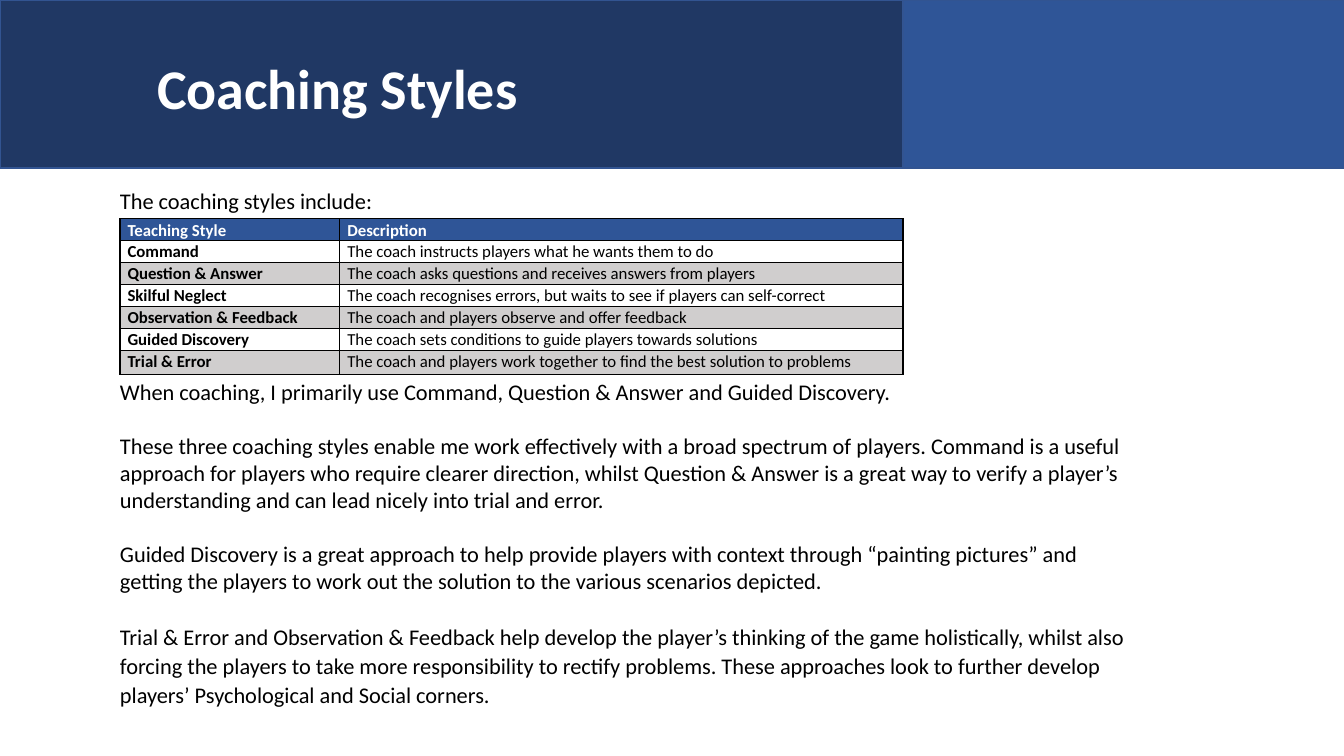
"""Build the Coaching Styles slide."""
from dataclasses import dataclass

import pptx
import pptx.dml.color
import pptx.enum.shapes
import pptx.enum.text
import pptx.oxml
import pptx.oxml.ns
import pptx.util
import pptx.shapes.autoshape
import pptx.shapes.graphfrm
import pptx.slide
import pptx.table
import pptx.text.text


@dataclass(frozen=True)
class Theme:
    font: str = "Calibri"
    navy: str = "203864"
    blue: str = "2F5597"
    outline: str = "325491"
    white: str = "FFFFFF"
    grey: str = "D0CECE"
    black: str = "000000"
    title_size: float = 40
    body_size: float = 16
    table_size: float = 12


@dataclass(frozen=True)
class Frame:
    left: float
    top: float
    width: float
    height: float


@dataclass(frozen=True)
class Bar:
    frame: Frame
    fill: str


@dataclass(frozen=True)
class Style:
    name: str
    description: str


@dataclass(frozen=True)
class Passage:
    text: str
    before: float = 19.5
    after: float = 0
    spacing: float = 1.0


THEME = Theme()
SLIDE_WIDTH, SLIDE_HEIGHT = 960, 540
BAND_HEIGHT, BAND_SPLIT = 120.2, 645.1
TITLE_FRAME = Frame(105.1, 38.2, 828, 54)
TABLE_FRAME = Frame(85.7, 156.2, 559.4, 109.4)
BODY_FRAME = Frame(78.5, 130.3, 733, 388.8)
NAME_WIDTH = 157
ROW_HEIGHT = 15.36
CELL_MARGIN = 5.4

NAVY_BAR = Bar(Frame(0, 0, BAND_SPLIT, BAND_HEIGHT), THEME.navy)
BLUE_BAR = Bar(Frame(BAND_SPLIT, 0, SLIDE_WIDTH - BAND_SPLIT, BAND_HEIGHT), THEME.blue)

STYLES = [
    Style("Teaching Style", "Description"),
    Style("Command", "The coach instructs players what he wants them to do"),
    Style("Question & Answer", "The coach asks questions and receives answers from players"),
    Style("Skilful Neglect",
          "The coach recognises errors, but waits to see if players can self-correct"),
    Style("Observation & Feedback", "The coach and players observe and offer feedback"),
    Style("Guided Discovery", "The coach sets conditions to guide players towards solutions"),
    Style("Trial & Error",
          "The coach and players work together to find the best solution to problems"),
]

PASSAGES = [
    Passage("The coaching styles include:", before=0),
    Passage("When coaching, I primarily use Command, Question & Answer and Guided Discovery.",
            before=117.2),
    Passage("These three coaching styles enable me work effectively with a broad spectrum of "
            "players. Command is a useful approach for players who require clearer direction, "
            "whilst Question & Answer is a great way to verify a player’s understanding and "
            "can lead nicely into trial and error."),
    Passage("Guided Discovery is a great approach to help provide players with context through "
            "“painting pictures” and getting the players to work out the solution to the "
            "various scenarios depicted."),
    Passage("Trial & Error and Observation & Feedback help develop the player’s thinking of "
            "the game holistically, whilst also forcing the players to take more "
            "responsibility to rectify problems. These approaches look to further develop "
            "players’ Psychological and Social corners.", after=8, spacing=1.07),
]


def colour(value: str) -> pptx.dml.color.RGBColor:
    """Turn a hex string into a colour."""
    return pptx.dml.color.RGBColor.from_string(value)


def points(frame: Frame) -> list[pptx.util.Pt]:
    """Give a frame's left, top, width and height as lengths."""
    return [pptx.util.Pt(value) for value in (frame.left, frame.top, frame.width, frame.height)]


def write(para: pptx.text.text._Paragraph, text: str, *, size: float,
          ink: str = THEME.black, bold: bool = False, before: float = 0,
          after: float = 0, spacing: float = 1.0) -> None:
    """Write one formatted paragraph."""
    para.alignment = pptx.enum.text.PP_ALIGN.LEFT
    para.space_before = pptx.util.Pt(before)
    para.space_after = pptx.util.Pt(after)
    para.line_spacing = spacing
    span = para.add_run()
    span.text = text
    span.font.name = THEME.font
    span.font.size = pptx.util.Pt(size)
    span.font.bold = bold
    span.font.color.rgb = colour(ink)


def place(box: pptx.shapes.autoshape.Shape, frame: Frame) -> None:
    """Move and resize a placeholder."""
    box.left, box.top, box.width, box.height = points(frame)


def add_bar(page: pptx.slide.Slide, bar: Bar) -> pptx.shapes.autoshape.Shape:
    """Add one block of the header band."""
    box = page.shapes.add_shape(pptx.enum.shapes.MSO_SHAPE.RECTANGLE, *points(bar.frame))
    box.shadow.inherit = False
    box.fill.solid()
    box.fill.fore_color.rgb = colour(bar.fill)
    box.line.color.rgb = colour(THEME.outline)
    box.line.width = pptx.util.Pt(1)
    return box


def fill_title(page: pptx.slide.Slide) -> pptx.shapes.autoshape.Shape:
    """Fill the title placeholder."""
    box = page.shapes.title
    place(box, TITLE_FRAME)
    box.text_frame.vertical_anchor = pptx.enum.text.MSO_ANCHOR.MIDDLE
    box.text_frame.auto_size = pptx.enum.text.MSO_AUTO_SIZE.NONE
    write(box.text_frame.paragraphs[0], "Coaching Styles", size=THEME.title_size,
          ink=THEME.white, bold=True, spacing=0.9)
    return box


def fill_body(page: pptx.slide.Slide) -> pptx.shapes.autoshape.Shape:
    """Fill the body placeholder with unbulleted passages."""
    box = page.placeholders[1]
    place(box, BODY_FRAME)
    frame = box.text_frame
    frame.word_wrap = True
    frame.auto_size = pptx.enum.text.MSO_AUTO_SIZE.SHAPE_TO_FIT_TEXT
    for index, passage in enumerate(PASSAGES):
        para = frame.add_paragraph() if index else frame.paragraphs[0]
        write(para, passage.text, size=THEME.body_size, before=passage.before,
              after=passage.after, spacing=passage.spacing)
        properties = para._p.get_or_add_pPr()
        properties.set("marL", "0")
        properties.set("indent", "0")
        pptx.oxml.ns.qn("a:buNone")
        properties.append(pptx.oxml.parse_xml(
            f'<a:buNone {pptx.oxml.ns.nsdecls("a")}/>'))
    return box


def add_borders(cell: pptx.table._Cell) -> None:
    """Draw a thin line on all four sides of a cell."""
    properties = cell._tc.get_or_add_tcPr()
    for side in ("lnL", "lnR", "lnT", "lnB"):
        properties.append(pptx.oxml.parse_xml(
            f'<a:{side} {pptx.oxml.ns.nsdecls("a")} w="{pptx.util.Pt(1)}"><a:solidFill>'
            f'<a:srgbClr val="{THEME.black}"/></a:solidFill></a:{side}>'))


def add_styles_table(page: pptx.slide.Slide) -> pptx.shapes.graphfrm.GraphicFrame:
    """Add the table of coaching styles."""
    holder = page.shapes.add_table(len(STYLES), 2, *points(TABLE_FRAME))
    table = holder.table
    table.horz_banding = False
    table.columns[0].width = pptx.util.Pt(NAME_WIDTH)
    table.columns[1].width = pptx.util.Pt(TABLE_FRAME.width - NAME_WIDTH)
    last = len(STYLES) - 1
    for row, style in enumerate(STYLES):
        height = TABLE_FRAME.height - last * ROW_HEIGHT if row == last else ROW_HEIGHT
        table.rows[row].height = pptx.util.Pt(height)
        fill = THEME.blue if row == 0 else THEME.white if row % 2 else THEME.grey
        for column, text in enumerate((style.name, style.description)):
            cell = table.cell(row, column)
            add_borders(cell)
            cell.fill.solid()
            cell.fill.fore_color.rgb = colour(fill)
            cell.margin_left = cell.margin_right = pptx.util.Pt(CELL_MARGIN)
            cell.margin_top = cell.margin_bottom = pptx.util.Pt(0)
            write(cell.text_frame.paragraphs[0], text, size=THEME.table_size,
                  ink=THEME.black if row else THEME.white,
                  bold=row == 0 or column == 0, after=8, spacing=1.07)
    return holder


def main() -> None:
    """Build and save the deck."""
    deck = pptx.Presentation()
    deck.slide_width = pptx.util.Pt(SLIDE_WIDTH)
    deck.slide_height = pptx.util.Pt(SLIDE_HEIGHT)
    page = deck.slides.add_slide(deck.slide_layouts[1])
    layers = [add_bar(page, NAVY_BAR), fill_title(page), add_styles_table(page),
              fill_body(page), add_bar(page, BLUE_BAR)]
    for layer in layers:
        page.shapes._spTree.append(layer._element)
    deck.save("out.pptx")


if __name__ == "__main__":
    main()
